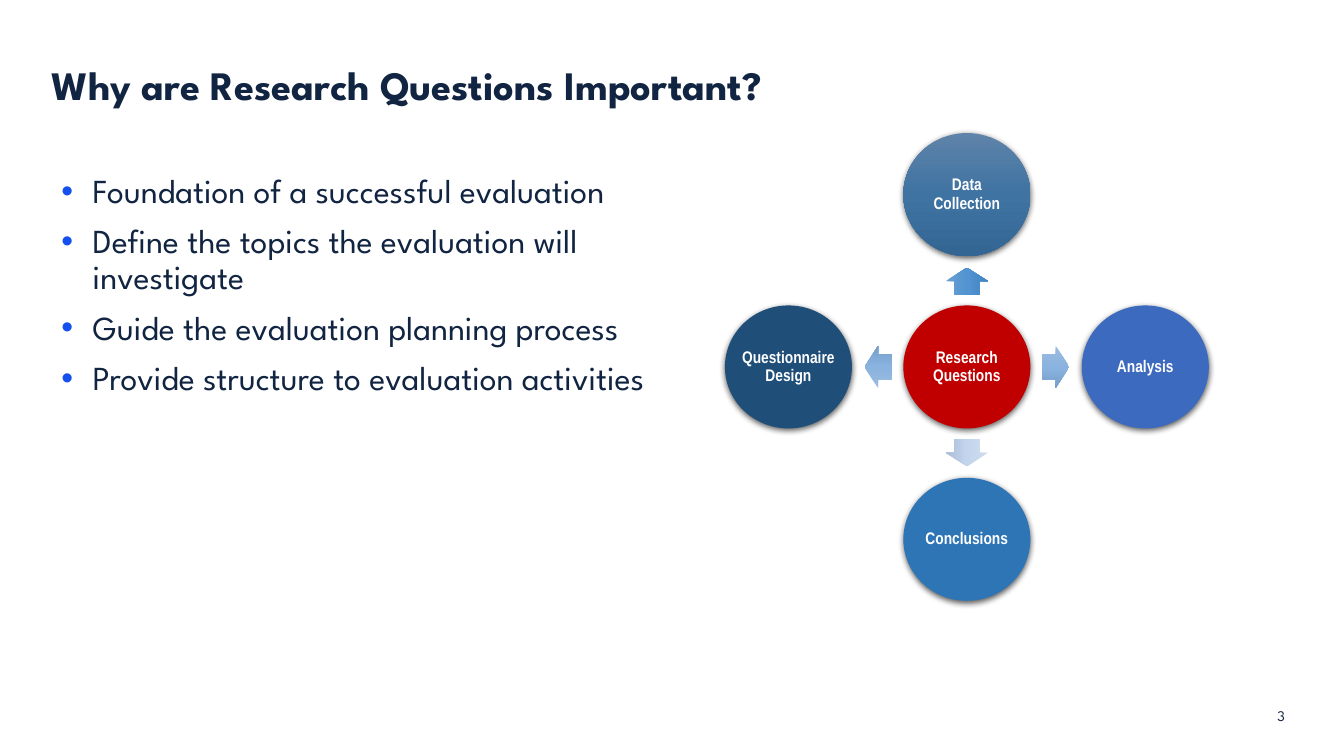
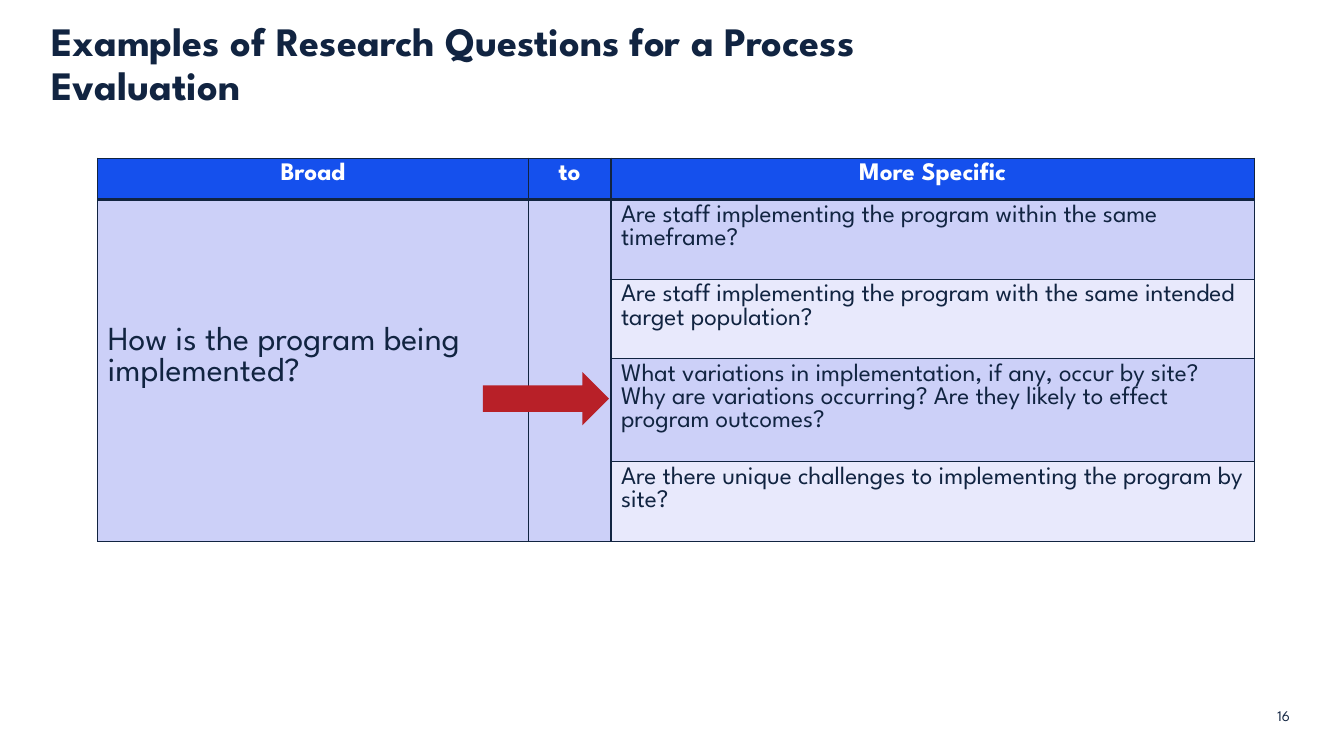
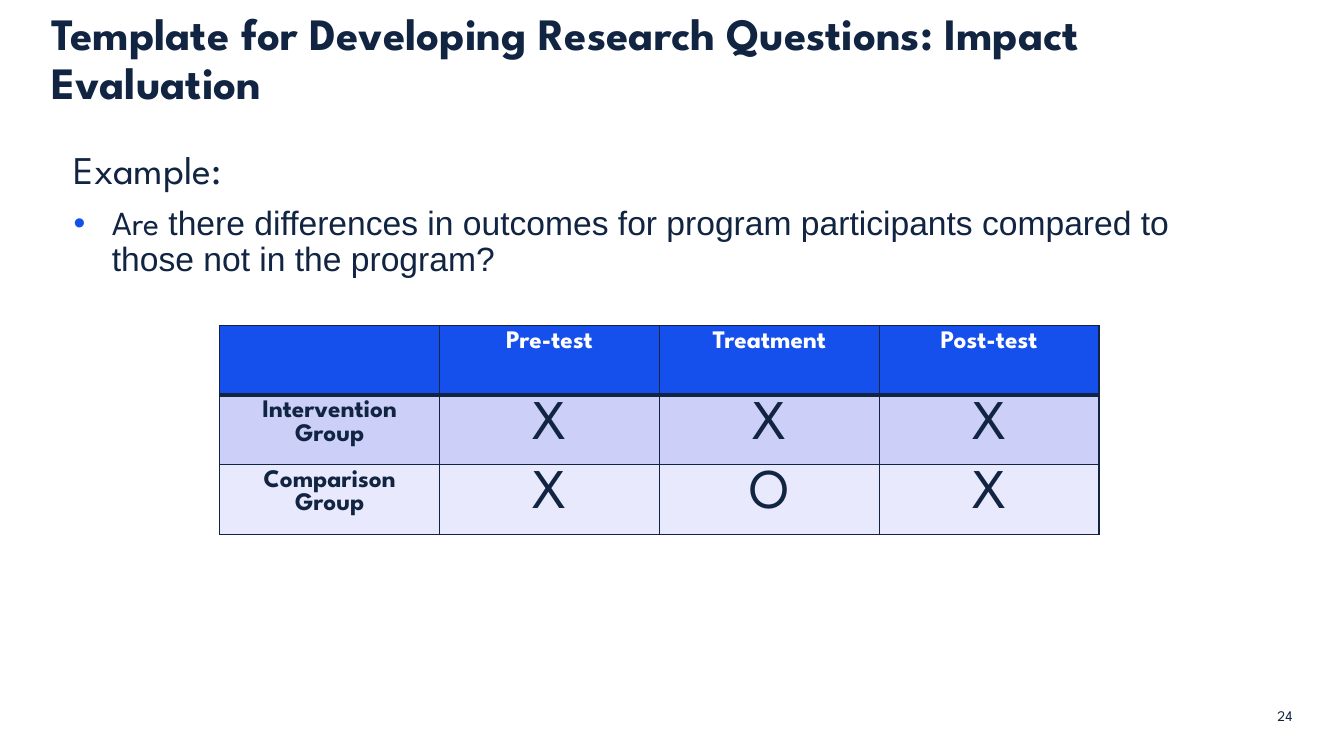
from dataclasses import dataclass
from lxml import etree
from pptx import Presentation
from pptx.dml.color import RGBColor
from pptx.enum.shapes import MSO_SHAPE
from pptx.enum.text import MSO_ANCHOR, MSO_AUTO_SIZE, PP_ALIGN
from pptx.oxml import parse_xml
from pptx.oxml.ns import nsdecls
from pptx.util import Inches, Pt

LEFT, CENTER = PP_ALIGN.LEFT, PP_ALIGN.CENTER
TOP, MIDDLE, BOTTOM = MSO_ANCHOR.TOP, MSO_ANCHOR.MIDDLE, MSO_ANCHOR.BOTTOM
NO_FIT = MSO_AUTO_SIZE.NONE
OVAL = MSO_SHAPE.OVAL
UP, DOWN = MSO_SHAPE.UP_ARROW, MSO_SHAPE.DOWN_ARROW
ARROW_LEFT, ARROW_RIGHT = MSO_SHAPE.LEFT_ARROW, MSO_SHAPE.RIGHT_ARROW
CONTENT_LAYOUT, TITLE_LAYOUT = 1, 5


@dataclass(frozen=True)
class Theme:
    ink: str = "112441"
    accent: str = "1550ED"
    white: str = "FFFFFF"
    band_dark: str = "CCD0F8"
    band_light: str = "E8E9FC"
    arrow: str = "B82028"
    font: str = "League Spartan"
    alt_font: str = "Arial"
    label_font: str = "Arial Narrow"
    title: float = 28.8
    title_large: float = 32
    lead: float = 28
    body: float = 24
    cell: float = 18
    mark: float = 40
    label: float = 12
    number: float = 10.5
    spacing: float = 0.9


T = Theme()


def assign(obj, values):
    for name, value in values.items():
        setattr(obj, name, value)


class Deck:
    def __init__(self):
        self.prs = Presentation()
        assign(self.prs, {"slide_width": Inches(13.33), "slide_height": Inches(7.5)})
        self.s = None

    def slide(self, title, width, number, size=T.title, layout=CONTENT_LAYOUT):
        self.s = self.prs.slides.add_slide(self.prs.slide_layouts[layout])
        sp = self.s.shapes.title
        self.place(sp, 0.51, 0.62, width, 0.46)
        self.frame(sp.text_frame, BOTTOM)
        self.paragraph(sp.text_frame.paragraphs[0], [(title, {"size": size, "bold": True})],
                       line_spacing=T.spacing)
        box = self.s.shapes.add_textbox(Inches(12.67), Inches(7.02), Inches(0.3), Inches(0.15))
        self.frame(box.text_frame, MIDDLE)
        self.paragraph(box.text_frame.paragraphs[0], [(number, {"size": T.number})])

    def place(self, sp, x, y, w, h):
        assign(sp, {"left": Inches(x), "top": Inches(y), "width": Inches(w), "height": Inches(h)})

    def frame(self, tf, anchor, inset=(0, 0), wrap=True):
        side, end = map(Inches, inset)
        assign(tf, {"vertical_anchor": anchor, "word_wrap": wrap, "auto_size": NO_FIT,
                    "margin_left": side, "margin_right": side,
                    "margin_top": end, "margin_bottom": end})

    def paragraph(self, p, runs, align=LEFT, **spacing):
        assign(p, {"alignment": align, **spacing})
        for text, style in runs:
            if "\v" in text:
                p.text = text
                added = p.runs
            else:
                r = p.add_run()
                r.text = text
                added = [r]
            values = {"name": T.font, "size": T.body, "bold": False, "color": T.ink, **style}
            color = RGBColor.from_string(values.pop("color"))
            values["size"] = Pt(values["size"])
            for r in added:
                assign(r.font, values)
                r.font.color.rgb = color

    def bullet(self, p, indent):
        pPr = p._p.get_or_add_pPr()
        pPr.set("marL", str(Inches(indent)))
        pPr.set("indent", str(-Inches(indent)))
        if not indent:
            pPr.append(parse_xml(f"<a:buNone {nsdecls('a')}/>"))
            return
        for xml in (f'<a:buClr {nsdecls("a")}><a:srgbClr val="{T.accent}"/></a:buClr>',
                    f'<a:buFont {nsdecls("a")} typeface="{T.alt_font}"/>',
                    f'<a:buChar {nsdecls("a")} char="•"/>'):
            pPr.append(parse_xml(xml))

    def body(self, at, items):
        sp = self.s.placeholders[1]
        self.place(sp, *at)
        tf = sp.text_frame
        self.frame(tf, TOP, (0.1, 0.05))
        for i, (indent, runs) in enumerate(items):
            p = tf.add_paragraph() if i else tf.paragraphs[0]
            self.bullet(p, indent)
            self.paragraph(p, runs, line_spacing=T.spacing, space_before=Pt(10 if i else 0))

    def shape(self, kind, at, fill, angle=270, adjust=()):
        sp = self.s.shapes.add_shape(kind, *map(Inches, at))
        sp.shadow.inherit = False
        sp.line.fill.background()
        for i, value in enumerate(adjust):
            sp.adjustments[i] = value
        if isinstance(fill, str):
            sp.fill.solid()
            sp.fill.fore_color.rgb = RGBColor.from_string(fill)
        else:
            self.gradient(sp, fill, angle)
        return sp

    def gradient(self, sp, colors, angle):
        sp.fill.gradient()
        sp.fill.gradient_angle = angle
        stops = sp._element.spPr.find(".//{*}gsLst")
        for stop in list(stops):
            stops.remove(stop)
        for i, color in enumerate(colors):
            stops.append(parse_xml(f'<a:gs {nsdecls("a")} pos="{i * 50000}">'
                                   f'<a:srgbClr val="{color}"/></a:gs>'))

    def circle(self, cx, cy, text, fill):
        w, h = 1.26, 1.22
        sp = self.shape(OVAL, (cx - w / 2, cy - h / 2, w, h), fill)
        effects = sp._element.spPr.find("{*}effectLst")
        effects.append(parse_xml(
            f'<a:outerShdw {nsdecls("a")} blurRad="{Pt(4.5)}" dist="{Pt(1.5)}" dir="5400000" '
            'algn="ctr" rotWithShape="0"><a:srgbClr val="000000"><a:alpha val="63000"/>'
            '</a:srgbClr></a:outerShdw>'))
        self.frame(sp.text_frame, MIDDLE, wrap=False)
        style = {"name": T.label_font, "size": T.label, "bold": True, "color": T.white}
        self.paragraph(sp.text_frame.paragraphs[0], [(text, style)], CENTER,
                       line_spacing=T.spacing)

    def borders(self, cell, top, bottom):
        tcPr = cell._tc.get_or_add_tcPr()
        for i, (side, width) in enumerate((("L", 1), ("R", 1), ("T", top), ("B", bottom))):
            ln = etree.Element(tcPr.tag.replace("tcPr", f"ln{side}"), w=str(Pt(width)))
            ln.append(parse_xml(f'<a:solidFill {nsdecls("a")}><a:srgbClr val="{T.ink}"/>'
                                '</a:solidFill>'))
            tcPr.insert(i, ln)

    def table(self, x, y, widths, heights, rows, style_of):
        at = map(Inches, (x, y, sum(widths), sum(heights)))
        table = self.s.shapes.add_table(len(heights), len(widths), *at).table
        for col, width in zip(table.columns, widths):
            col.width = Inches(width)
        for row, height in zip(table.rows, heights):
            row.height = Inches(height)
        for i, texts in enumerate(rows):
            for j, text in enumerate(texts):
                cell = table.cell(i, j)
                style, align = style_of(i, j)
                if i == 0:
                    fill, style, align = T.accent, {"size": T.cell, "bold": True, "color": T.white}, CENTER
                else:
                    fill = T.band_dark if i % 2 else T.band_light
                cell.fill.solid()
                cell.fill.fore_color.rgb = RGBColor.from_string(fill)
                self.borders(cell, 3 if i == 1 else 1, 1 if i else 3)
                if text:
                    self.paragraph(cell.text_frame.paragraphs[0], [(text, style)], align)
        return table


def importance(deck):
    deck.slide("Why are Research Questions Important?", 9.13, "3")
    points = ("Foundation of a successful evaluation",
              "Define the topics the evaluation will investigate",
              "Guide the evaluation planning process",
              "Provide structure to evaluation activities")
    deck.body((0.51, 1.68, 6.25, 4.02), [(0.31, [(text, {})]) for text in points])
    cx, cy = 9.59, 3.64
    side_blue = ("9CBCE0", "8AB3DF", "769ECB")
    spokes = (
        (0, -1, "Data\vCollection", ("5F83AA", "3F73A2", "346694"),
         UP, ("6EA0D2", "5194D1", "4184C1"), 0),
        (1, 0, "Analysis", "3C6ABE", ARROW_RIGHT, side_blue, 270),
        (0, 1, "Conclusions", "2E75B6", DOWN, ("CEDCEF", "C3D5ED", "AABDD6"), 180),
        (-1, 0, "Questionnaire\vDesign", "1F4E79", ARROW_LEFT, side_blue, 90),
    )
    deck.circle(cx, cy, "Research\vQuestions", "C00000")
    for dx, dy, text, fill, kind, arrow_fill, angle in spokes:
        w, h = (0.27, 0.42) if dx else (0.42, 0.27)
        at = (cx + dx * 0.88 - w / 2, cy + dy * 0.85 - h / 2, w, h)
        deck.shape(kind, at, arrow_fill, angle, (0.6, 0.5))
        deck.circle(cx + dx * 1.77, cy + dy * 1.71, text, fill)


def process_examples(deck):
    deck.slide("Examples of Research Questions for a Process Evaluation", 9.78, "16",
               layout=TITLE_LAYOUT)
    rows = (
        ("Broad", "to", "More Specific"),
        ("How is the program being implemented?", "",
         "Are staff implementing the program within the same timeframe?"),
        ("", "", "Are staff implementing the program with the same intended target population?"),
        ("", "", "What variations in implementation, if any, occur by site? Why are variations "
                 "occurring? Are they likely to effect program outcomes?"),
        ("", "", "Are there unique challenges to implementing the program by site?"),
    )
    table = deck.table(0.97, 1.57, (4.27, 0.82, 6.38), (0.41, 0.79, 0.79, 1.02, 0.79), rows,
                       lambda i, j: ({"size": T.cell if j else T.body}, LEFT))
    for j in range(2):
        table.cell(1, j).merge(table.cell(4, j))
    assign(table.cell(1, 0), {"vertical_anchor": MIDDLE, "margin_bottom": Inches(0.3)})
    deck.shape(ARROW_RIGHT, (4.79, 3.69, 1.25, 0.53), T.arrow)


def impact_template(deck):
    deck.slide("Template for Developing Research Questions: Impact Evaluation", 10.28, "24",
               size=T.title_large)
    deck.body((0.63, 1.44, 11.82, 4.26), [
        (0, [("Example:", {"size": T.lead})]),
        (0.38, [("Are", {}),
                (" there differences in outcomes for program participants compared to those "
                 "not in the program?", {"name": T.alt_font})]),
    ])
    rows = (("", "Pre-test", "Treatment", "Post-test"),
            ("Intervention Group", "X", "X", "X"),
            ("Comparison Group", "X", "O", "X"))
    deck.table(2.18, 3.23, (2.18,) * 4, (0.69,) * 3, rows,
               lambda i, j: ({"size": T.mark} if j else {"size": T.cell, "bold": True}, CENTER))


def main():
    deck = Deck()
    for build in (importance, process_examples, impact_template):
        build(deck)
    deck.prs.save("out.pptx")


if __name__ == "__main__":
    main()
